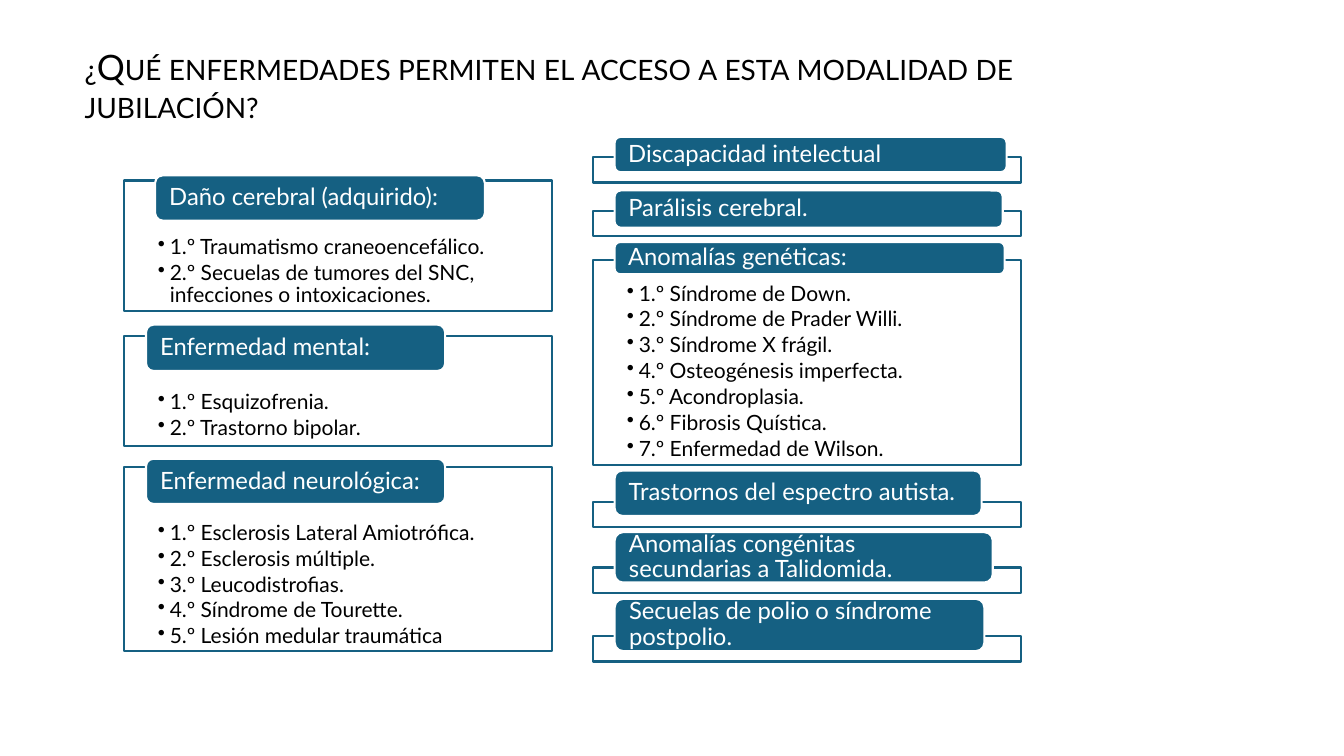
from lxml import etree
from pptx import Presentation
from pptx import util as u
from pptx.dml.color import RGBColor
from pptx.enum import shapes, text
from pptx.oxml import ns

TEAL = RGBColor(0x15, 0x60, 0x82)
WHITE = RGBColor(0xFF, 0xFF, 0xFF)
BLACK = RGBColor(0x00, 0x00, 0x00)
CARD_WIDTH = 10.8
LEFT_COLUMN, RIGHT_COLUMN = 3.12, 14.94
STRIP_HEIGHT = 0.64

# Card: left, top, height, top inset; heading: left, top, width, height; wording
CARDS = [
    ((LEFT_COLUMN, 4.55, 3.3, 1.4), (3.91, 4.42, 8.31, 1.14), "Daño cerebral (adquirido):",
     ["1.º Traumatismo craneoencefálico.",
      "2.º Secuelas de tumores del SNC, infecciones o intoxicaciones."]),
    ((LEFT_COLUMN, 8.46, 2.77, 1.4), (3.68, 8.18, 7.54, 1.17), "Enfermedad mental:",
     ["1.º Esquizofrenia.", "2.º Trastorno bipolar."]),
    ((LEFT_COLUMN, 11.76, 4.65, 1.4), (3.68, 11.56, 7.54, 1.14), "Enfermedad neurológica:",
     ["1.º Esclerosis Lateral Amiotrófica.", "2.º Esclerosis múltiple.",
      "3.º Leucodistrofias.", "4.º Síndrome de Tourette.",
      "5.º Lesión medular traumática"]),
    ((RIGHT_COLUMN, 3.96, STRIP_HEIGHT, 0), (15.49, 3.45, 9.88, 0.89),
     "Discapacidad intelectual", []),
    ((RIGHT_COLUMN, 5.31, STRIP_HEIGHT, 0), (15.49, 4.8, 9.78, 0.94),
     "Parálisis cerebral.", []),
    ((RIGHT_COLUMN, 6.55, 5.18, 0.58), (15.49, 6.1, 9.83, 0.81), "Anomalías genéticas:",
     ["1.º Síndrome de Down.", "2.º Síndrome de Prader Willi.", "3.º Síndrome X frágil.",
      "4.º Osteogénesis imperfecta.", "5.º Acondroplasia.", "6.º Fibrosis Quística.",
      "7.º Enfermedad de Wilson."]),
    ((RIGHT_COLUMN, 12.65, STRIP_HEIGHT, 0), (15.49, 11.86, 9.25, 1.14),
     "Trastornos del espectro autista.", []),
    ((RIGHT_COLUMN, 14.3, STRIP_HEIGHT, 0), (15.49, 13.41, 9.53, 1.27),
     "Anomalías congénitas secundarias a Talidomida.", []),
    ((RIGHT_COLUMN, 16.03, STRIP_HEIGHT, 0), (15.49, 15.09, 9.32, 1.32),
     "Secuelas de polio o síndrome postpolio.", []),
]


def write(shape, lines, size, color, insets, anchor=text.MSO_ANCHOR.MIDDLE,
          bullets=False, small_caps=False):
    frame = shape.text_frame
    frame.word_wrap = True
    frame.auto_size = text.MSO_AUTO_SIZE.NONE
    frame.vertical_anchor = anchor
    frame.margin_left, frame.margin_top, frame.margin_right, frame.margin_bottom = map(u.Cm, insets)
    for number, line in enumerate(lines):
        paragraph = frame.add_paragraph() if number else frame.paragraphs[0]
        paragraph.alignment = text.PP_ALIGN.LEFT
        paragraph.line_spacing = 0.9
        run = paragraph.add_run()
        run.text = line
        run.font.name = "Lato"
        run.font.size = u.Pt(size)
        run.font.color.rgb = color
        if small_caps:
            run._r.get_or_add_rPr().set("cap", "small")
        if bullets:
            paragraph.level = 1
            paragraph.space_before = u.Pt(0)
            paragraph.space_after = u.Pt(0.15 * size)
            properties = paragraph._p.get_or_add_pPr()
            properties.set("marL", str(u.Cm(0.3)))
            properties.set("indent", str(-u.Cm(0.3)))
            etree.SubElement(properties, ns.qn("a:buChar")).set("char", "•")


def add_box(slide, kind, position, fill, outline):
    shape = slide.shapes.add_shape(kind, *map(u.Cm, position))
    shape.shadow.inherit = False
    shape.fill.solid()
    shape.fill.fore_color.rgb = fill
    shape.line.color.rgb = outline
    shape.line.width = u.Pt(1.5)
    return shape


presentation = Presentation()
presentation.slide_width = u.Cm(33.87)
presentation.slide_height = u.Cm(19.05)
slide = presentation.slides.add_slide(presentation.slide_layouts[5])

# Title
title = slide.shapes.title
title.left, title.top, title.width, title.height = map(u.Cm, (1.88, 1.12, 26.67, 2.21))
write(title, ["¿Qué enfermedades permiten el acceso a esta modalidad de jubilación?"],
      size=25, color=BLACK, insets=(0.25, 0.13, 0.25, 0.13), small_caps=True)

# Cards, each with its heading tab on top
for (left, top, height, inset), heading_position, heading, diseases in CARDS:
    card = add_box(slide, shapes.MSO_SHAPE.RECTANGLE,
                   (left, top, CARD_WIDTH, height), WHITE, TEAL)
    if diseases:
        write(card, diseases, size=15, color=BLACK, insets=(0.86, inset, 0.86, 0.3),
              anchor=text.MSO_ANCHOR.TOP, bullets=True)
    tab = add_box(slide, shapes.MSO_SHAPE.ROUNDED_RECTANGLE, heading_position, TEAL, WHITE)
    write(tab, [heading], size=17, color=WHITE, insets=(0.3, 0, 0.3, 0))

presentation.save("out.pptx")
